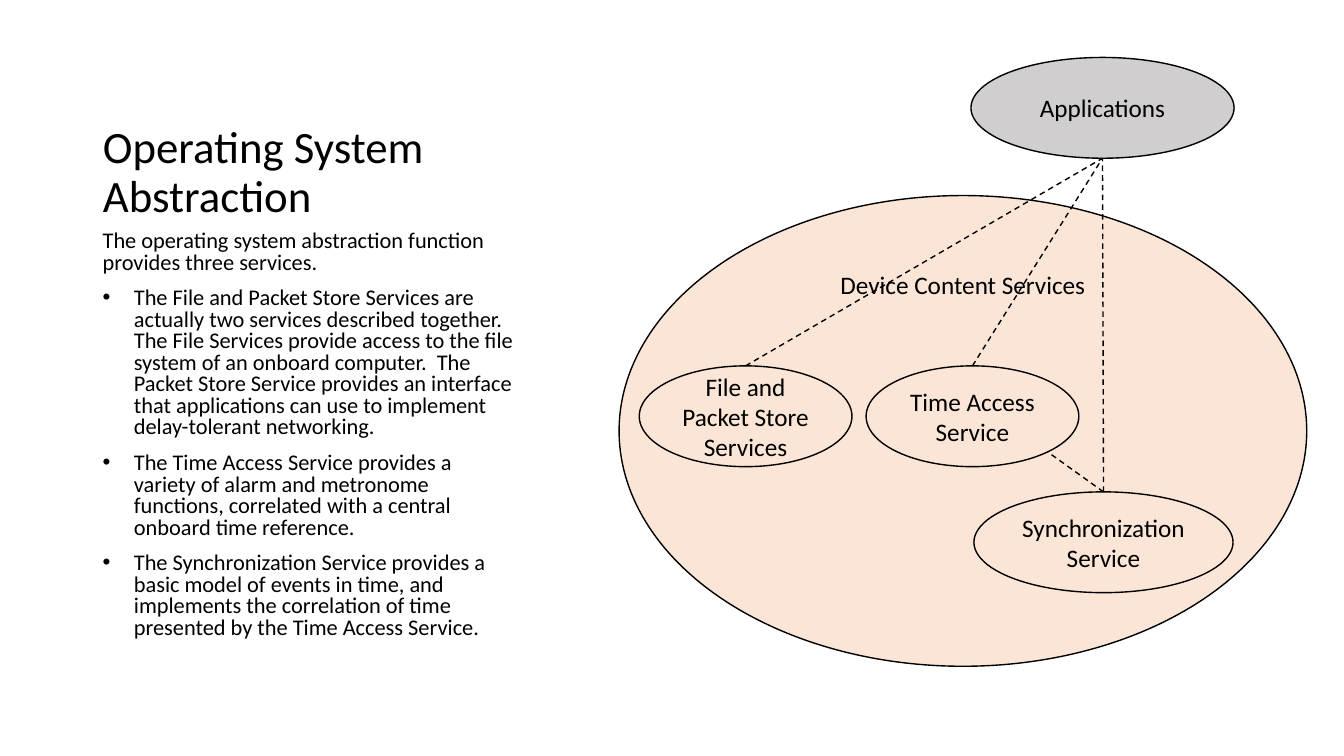
"""Build the Operating System Abstraction slide."""
from lxml import etree
from pptx import Presentation, util as u
from pptx.dml.color import RGBColor
from pptx.enum import dml, shapes, text
from pptx.oxml.ns import qn

PX = 9144
BLACK = RGBColor(0x00, 0x00, 0x00)
PEACH = RGBColor(0xFB, 0xE5, 0xD6)
GREY = RGBColor(0xD0, 0xCE, 0xCE)
TOP, MIDDLE, BOTTOM = (text.MSO_ANCHOR.TOP, text.MSO_ANCHOR.MIDDLE,
                       text.MSO_ANCHOR.BOTTOM)
LEFT, CENTER = text.PP_ALIGN.LEFT, text.PP_ALIGN.CENTER

TITLE = "Operating System Abstraction"
TITLE_BOX = (92, 50, 430, 175)
BODY_BOX = (92, 225, 430, 417)
INDENT = 31
INTRO = "The operating system abstraction function provides three services."
BULLETS = [
    "The File and Packet Store Services are actually two services described "
    "together.  The File Services provide access to the file system of an "
    "onboard computer.  The Packet Store Service provides an interface that "
    "applications can use to implement delay-tolerant networking.",
    "The Time Access Service provides a variety of alarm and metronome "
    "functions, correlated with a central onboard time reference.",
    "The Synchronization Service provides a basic model of events in time, "
    "and implements the correlation of time presented by the Time Access "
    "Service.",
]
ELLIPSES = [
    ("Device Content Services", (614, 194, 682, 467), PEACH, TOP),
    ("Applications", (963, 57, 261, 100), GREY, MIDDLE),
    ("File and Packet Store Services", (634, 363, 211, 100), PEACH, MIDDLE),
    ("Time Access Service", (859, 363, 211, 100), PEACH, MIDDLE),
    ("Synchronization Service", (966, 488, 257, 100), PEACH, MIDDLE),
]
BOTTOM_SITE, LOWER_RIGHT_SITE = (0.5, 1), (0.854, 0.854)
LINKS = [
    ("File and Packet Store Services", "Applications", BOTTOM_SITE),
    ("Time Access Service", "Applications", BOTTOM_SITE),
    ("Synchronization Service", "Applications", BOTTOM_SITE),
    ("Synchronization Service", "Time Access Service", LOWER_RIGHT_SITE),
]


def emu(box):
    return [u.Emu(v * PX) for v in box]


def assign(obj, values):
    for name, value in values.items():
        setattr(obj, name, value)


def write(tf, lines, size, anchor, align, **spacing):
    assign(tf, dict(word_wrap=True, auto_size=text.MSO_AUTO_SIZE.NONE,
                    vertical_anchor=anchor))
    for i, line in enumerate(lines):
        p = tf.add_paragraph() if i else tf.paragraphs[0]
        assign(p, dict(alignment=align, **spacing))
        r = p.add_run()
        r.text = line
        assign(r.font, dict(size=u.Pt(size), name="Calibri"))
        r.font.color.rgb = BLACK


def add_bullet(p):
    pPr = p._p.get_or_add_pPr()
    pPr.set("marL", str(INDENT * PX))
    pPr.set("indent", str(-INDENT * PX))
    etree.SubElement(pPr, qn("a:buFont")).set("typeface", "Arial")
    etree.SubElement(pPr, qn("a:buChar")).set("char", "•")


def add_ellipse(s, label, box, fill, anchor):
    sp = s.shapes.add_shape(shapes.MSO_SHAPE.OVAL, *emu(box))
    sp.shadow.inherit = False
    sp.fill.solid()
    sp.fill.fore_color.rgb = fill
    sp.line.color.rgb = BLACK
    sp.line.width = u.Pt(1)
    write(sp.text_frame, [label], 18, anchor, CENTER)
    return sp


def add_link(s, start, end, site):
    x = int(end.left + end.width * site[0])
    y = int(end.top + end.height * site[1])
    line = s.shapes.add_connector(shapes.MSO_CONNECTOR.STRAIGHT, 0, 0, x, y)
    line.begin_connect(start, 0)
    line.line.color.rgb = BLACK
    assign(line.line, dict(width=u.Pt(1), dash_style=dml.MSO_LINE.DASH))
    etree.SubElement(line._element.spPr, qn("a:effectLst"))


def main():
    prs = Presentation()
    prs.slide_width, prs.slide_height = emu((1333, 750))
    s = prs.slides.add_slide(prs.slide_layouts[5])

    title = s.shapes.title
    assign(title, dict(zip(("left", "top", "width", "height"), emu(TITLE_BOX))))
    write(title.text_frame, [TITLE], 32, BOTTOM, LEFT, line_spacing=0.9)

    tf = s.shapes.add_textbox(*emu(BODY_BOX)).text_frame
    write(tf, [INTRO, *BULLETS], 16, TOP, LEFT,
          line_spacing=0.8, space_before=u.Pt(10))
    for p in tf.paragraphs[1:]:
        add_bullet(p)

    ovals = {e[0]: add_ellipse(s, *e) for e in ELLIPSES}
    for start, end, site in LINKS:
        add_link(s, ovals[start], ovals[end], site)
    prs.save("out.pptx")


if __name__ == "__main__":
    main()
